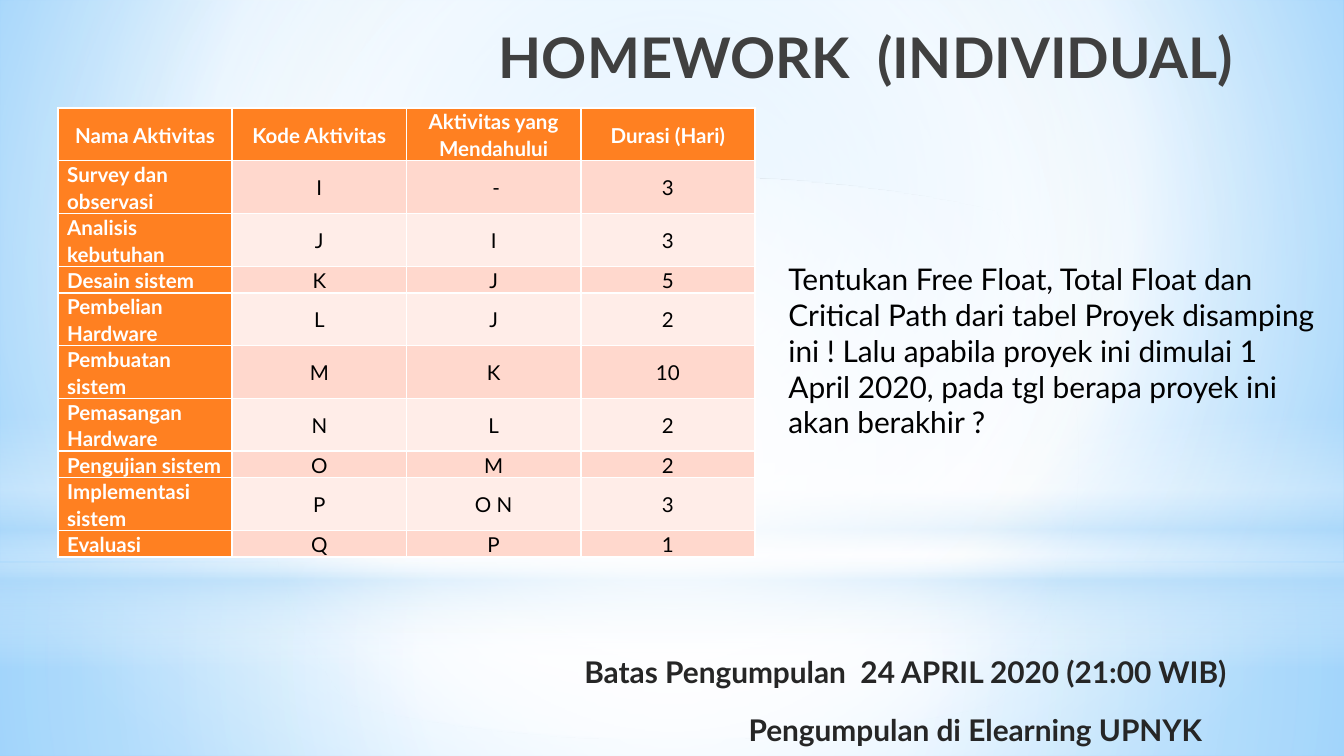
from collections import namedtuple
from dataclasses import dataclass
from lxml.etree import SubElement as Sub
from pptx import Presentation
from pptx.dml.color import RGBColor as Rgb
from pptx.enum.shapes import MSO_SHAPE as Kind
from pptx.enum.text import MSO_ANCHOR as Anchor, MSO_AUTO_SIZE as Fit, PP_ALIGN as Align
from pptx.oxml.ns import qn
from pptx.util import Pt

Box = namedtuple("Box", "x y w h")


@dataclass(frozen=True)
class Theme:
    font: str = "Lato"
    white: str = "FFFFFF"
    black: str = "000000"
    title: str = "404040"
    dark: str = "262626"
    head: str = "FF8021"
    odd: str = "FFD8CD"
    even: str = "FFEDE8"
    haze: str = "B4DCFA"
    sky: str = "9ED5FF"
    edge: str = "5BB9FF"
    big: int = 30
    mid: int = 16
    small: int = 11


T = Theme()
PAGE = Box(0, 0, 720, 405)
MID = (50, 50, 50, 50)
HEADS = ("Nama Aktivitas", "Kode Aktivitas", "Aktivitas yang Mendahului", "Durasi (Hari)")
TASKS = (
    ("Survey dan observasi", "I", " -", "3"),
    ("Analisis kebutuhan", "J", "I", "3"),
    ("Desain sistem", "K", "J", "5"),
    ("Pembelian Hardware", "L", "J", "2"),
    ("Pembuatan sistem", "M", "K", "10"),
    ("Pemasangan Hardware", "N", "L", "2"),
    ("Pengujian sistem", "O", "M", "2"),
    ("Implementasi sistem", "P", "O N", "3"),
    ("Evaluasi", "Q", "P", "1"),
)
SHORT = (3, 7, 9)
LINE = 14.15
TASK = (
    "Tentukan Free Float, Total Float dan Critical Path dari tabel Proyek disamping ini ! "
    "Lalu apabila proyek ini dimulai 1 April 2020, pada tgl berapa proyek ini akan berakhir ?"
)


def pts(box):
    return [Pt(n) for n in box]


def write(frame, text, size=T.mid, color=T.black, bold=False, align=Align.LEFT, space=None):
    para = frame.paragraphs[0]
    para.alignment = align
    para.line_spacing = space
    run = para.add_run()
    run.text = text
    font = run.font
    font.name, font.size, font.bold = T.font, Pt(size), bold
    font.color.rgb = Rgb.from_string(color)


def blend(fill, root, stops, focus=None):
    fill.gradient()
    grad = next(root.iter(qn("a:gradFill")))
    for old in list(grad):
        grad.remove(old)
    group = Sub(grad, qn("a:gsLst"))
    for pos, color, alpha in stops:
        stop = Sub(group, qn("a:gs"), pos=str(pos * 1000))
        tone = Sub(stop, qn("a:srgbClr"), val=color)
        if alpha < 100:
            Sub(tone, qn("a:alpha"), val=str(alpha * 1000))
    if focus:
        ring = Sub(grad, qn("a:path"), path="circle")
        Sub(ring, qn("a:fillToRect"), {k: str(n * 1000) for k, n in zip("ltrb", focus)})
    else:
        Sub(grad, qn("a:lin"), ang="5400000", scaled="0")


def backdrop(slide, box):
    blend(slide.background.fill, slide.element,
          ((0, T.sky, 100), (60, T.white, 100), (100, T.edge, 100)), (20, 10, 20, 60))
    bands = (
        (Kind.RECTANGLE, 301.5, 103.5, MID,
         ((0, T.white, 91), (37, T.white, 76), (100, T.haze, 79))),
        (Kind.RECTANGLE, 0, 301.5, MID,
         ((0, T.white, 89), (48, T.white, 62), (100, T.haze, 79))),
        (Kind.RECTANGLE, 222.5, 135, None,
         ((0, T.white, 0), (29, T.white, 30), (45, T.haze, 40),
          (55, T.white, 26), (65, T.haze, 60), (100, T.white, 0))),
        (Kind.OVAL, 94.5, 301.5, MID, ((0, T.white, 100), (56, T.white, 0))),
    )
    for kind, top, high, focus, stops in bands:
        band = slide.shapes.add_shape(kind, *pts((box.x, box.y + top, box.w, high)))
        band.shadow.inherit = False
        band.line.fill.background()
        blend(band.fill, band.element, stops, focus)


def heading(slide, box, text):
    title = slide.shapes.title
    slide.shapes.element.append(title.element)
    title.left, title.top, title.width, title.height = pts(box)
    frame = title.text_frame
    frame.auto_size = Fit.NONE
    frame.vertical_anchor = Anchor.BOTTOM
    frame.margin_left = frame.margin_right = Pt(7.2)
    frame.margin_top = frame.margin_bottom = Pt(7.2)
    write(frame, text, size=T.big, color=T.title, bold=True, align=Align.RIGHT)


def note(slide, box, text, **form):
    frame = slide.shapes.add_textbox(*pts(box)).text_frame
    frame.word_wrap = True
    write(frame, text, **form)


def chart(slide, box):
    rows = (HEADS, *TASKS)
    table = slide.shapes.add_table(len(rows), len(HEADS), *pts(box)).table
    table.first_col = True
    for col in table.columns:
        col.width = Pt(box.w / len(HEADS))
    for r, row in enumerate(rows):
        table.rows[r].height = Pt(LINE if r in SHORT else 2 * LINE)
        for c, text in enumerate(row):
            cell = table.cell(r, c)
            lead = r == 0 or c == 0
            tint = T.head if lead else T.odd if r % 2 else T.even
            cell.fill.solid()
            cell.fill.fore_color.rgb = Rgb.from_string(tint)
            cell.vertical_anchor = Anchor.MIDDLE
            cell.margin_left = cell.margin_right = Pt(5)
            cell.margin_top = cell.margin_bottom = 0
            write(cell.text_frame, text, size=T.small, bold=lead,
                  color=T.white if lead else T.black, space=1.07,
                  align=Align.LEFT if r and c == 0 else Align.CENTER)


def main():
    deck = Presentation()
    deck.slide_width, deck.slide_height = Pt(PAGE.w), Pt(PAGE.h)
    slide = deck.slides.add_slide(deck.slide_layouts[0])
    sub = slide.placeholders[1].element
    sub.getparent().remove(sub)
    backdrop(slide, PAGE)
    heading(slide, Box(31, 10, 637, 45.5), "HOMEWORK  (INDIVIDUAL)")
    note(slide, Box(415.3, 136.2, 298, 104.4), TASK)
    note(slide, Box(306, 346.5, 407.5, 26.6),
         "Batas Pengumpulan  24 APRIL 2020 (21:00 WIB)", color=T.dark, bold=True)
    note(slide, Box(394, 378, 308, 26.6),
         "Pengumpulan di Elearning UPNYK", color=T.dark, bold=True)
    chart(slide, Box(31, 57.8, 373.6, 17 * LINE))
    deck.save("out.pptx")


if __name__ == "__main__":
    main()
